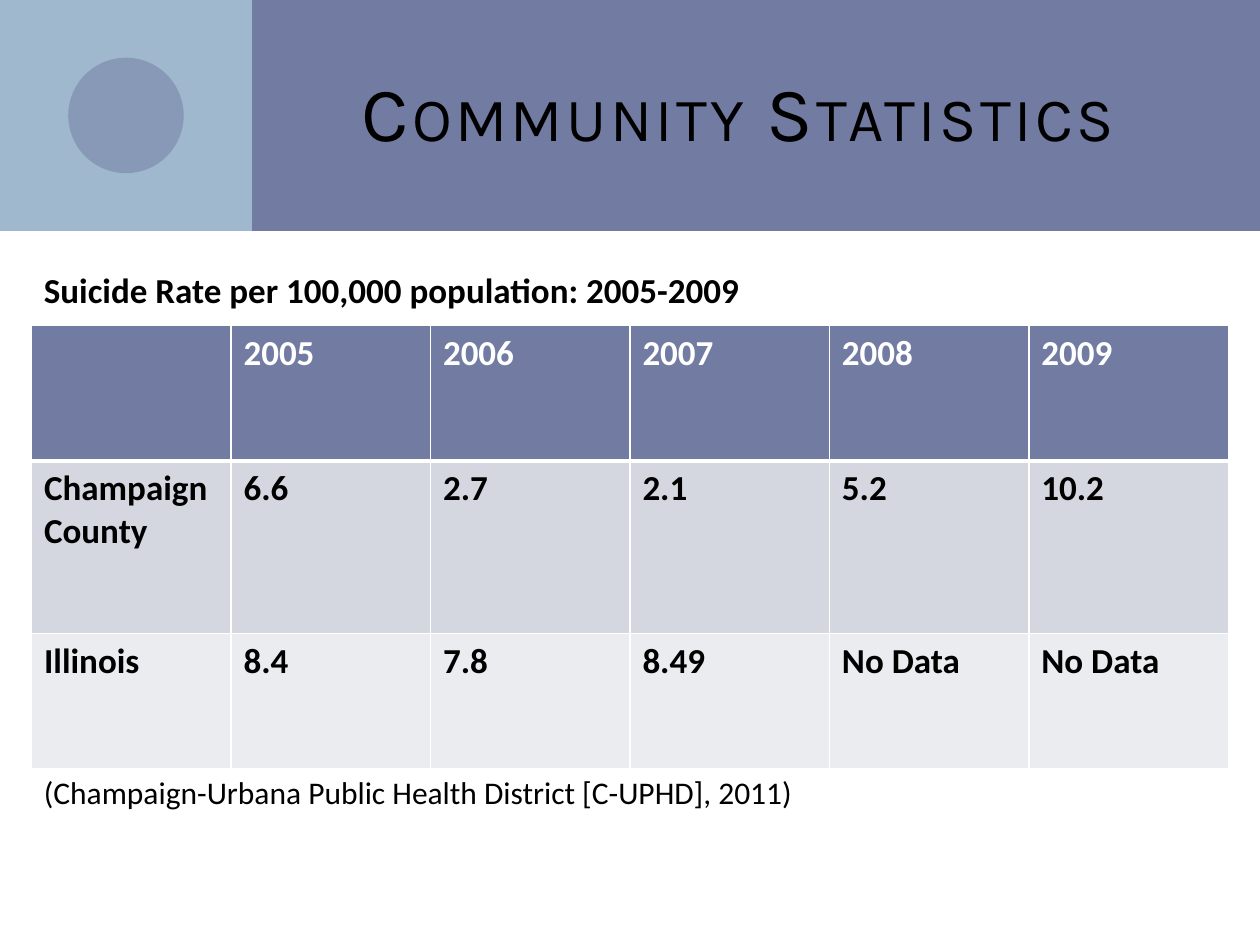
import pptx
import pptx.util
import pptx.dml.color
import pptx.enum.shapes
import pptx.enum.text
import pptx.oxml
import pptx.oxml.ns
import lxml.etree

Pt = pptx.util.Pt
RGBColor = pptx.dml.color.RGBColor
MSO_SHAPE = pptx.enum.shapes.MSO_SHAPE
qn = pptx.oxml.ns.qn

INDIGO = RGBColor(0x72, 0x7C, 0xA3)
SKY = RGBColor(0x9F, 0xB8, 0xCD)
ROW_DARK = RGBColor(0xD5, 0xD7, 0xE0)
ROW_LIGHT = RGBColor(0xEB, 0xEC, 0xF0)
BLACK = RGBColor(0, 0, 0)
WHITE = RGBColor(0xFF, 0xFF, 0xFF)


def style(paragraph, size, color, bold=False, face="Calibri"):
    paragraph.font.name = face
    paragraph.font.size = Pt(size)
    paragraph.font.bold = bold
    paragraph.font.color.rgb = color


def add_border(cell, side, width):
    line = lxml.etree.SubElement(cell._tc.get_or_add_tcPr(), qn(f"a:ln{side}"), w=str(Pt(width)))
    fill = lxml.etree.SubElement(line, qn("a:solidFill"))
    lxml.etree.SubElement(fill, qn("a:srgbClr"), val=str(WHITE))


prs = pptx.Presentation()
prs.slide_width, prs.slide_height = Pt(720), Pt(540)
slide = prs.slides.add_slide(prs.slide_layouts[5])

# Header band with its corner square and translucent disc
for kind, left, top, width, height, color in [
    (MSO_SHAPE.RECTANGLE, 0, 0, 720, 132, INDIGO),
    (MSO_SHAPE.RECTANGLE, 0, 0, 144, 132, SKY),
    (MSO_SHAPE.OVAL, 39, 33, 66, 66, INDIGO),
]:
    header_part = slide.shapes.add_shape(kind, Pt(left), Pt(top), Pt(width), Pt(height))
    header_part.shadow.inherit = False
    header_part.fill.solid()
    header_part.fill.fore_color.rgb = color
    header_part.line.fill.background()
disc_color = header_part._element.spPr.find(".//" + qn("a:srgbClr"))
lxml.etree.SubElement(disc_color, qn("a:alpha"), val="50000")

# Title, brought in front of the band
title = slide.shapes.title
slide.shapes._spTree.append(title._element)
title.left, title.top, title.width, title.height = Pt(192), Pt(18), Pt(492), Pt(90)
title.text_frame.auto_size = pptx.enum.text.MSO_AUTO_SIZE.NONE
title.text_frame.vertical_anchor = pptx.enum.text.MSO_ANCHOR.MIDDLE
title.text_frame.text = "Community Statistics"
heading = title.text_frame.paragraphs[0]
heading.alignment = pptx.enum.text.PP_ALIGN.RIGHT
style(heading, 44, BLACK, face="Karla")
heading_format = heading.runs[0]._r.get_or_add_rPr()
heading_format.set("cap", "small")
heading_format.set("spc", "200")

# Suicide rate table
rates = [
    ["", "2005", "2006", "2007", "2008", "2009"],
    ["Champaign County", "6.6", "2.7", "2.1", "5.2", "10.2"],
    ["Illinois", "8.4", "7.8", "8.49", "No Data", "No Data"],
]
row_heights = [77.5, 98.5, 77.5]
row_fills = [INDIGO, ROW_DARK, ROW_LIGHT]
table = slide.shapes.add_table(3, 6, Pt(18), Pt(186), Pt(684), Pt(sum(row_heights))).table
for r, values in enumerate(rates):
    table.rows[r].height = Pt(row_heights[r])
    for c, value in enumerate(values):
        cell = table.cell(r, c)
        cell.text = value
        style(cell.text_frame.paragraphs[0], 20, WHITE if r == 0 else BLACK, bold=True)
        # The rule below the header row is thicker than the others
        for side in "LRTB":
            add_border(cell, side, 3 if (r, side) in [(0, "B"), (1, "T")] else 1)
        cell.fill.solid()
        cell.fill.fore_color.rgb = row_fills[r]

# Table caption and source
for text, top, width, height, size, bold in [
    ("Suicide Rate per 100,000 population: 2005-2009", 150, 684, 31.5, 20, True),
    ("(Champaign-Urbana Public Health District [C-UPHD], 2011)", 438, 624, 29, 18, False),
]:
    note = slide.shapes.add_textbox(Pt(18), Pt(top), Pt(width), Pt(height)).text_frame
    note.word_wrap = True
    note.auto_size = pptx.enum.text.MSO_AUTO_SIZE.SHAPE_TO_FIT_TEXT
    note.text = text
    style(note.paragraphs[0], size, BLACK, bold)

prs.save("out.pptx")
